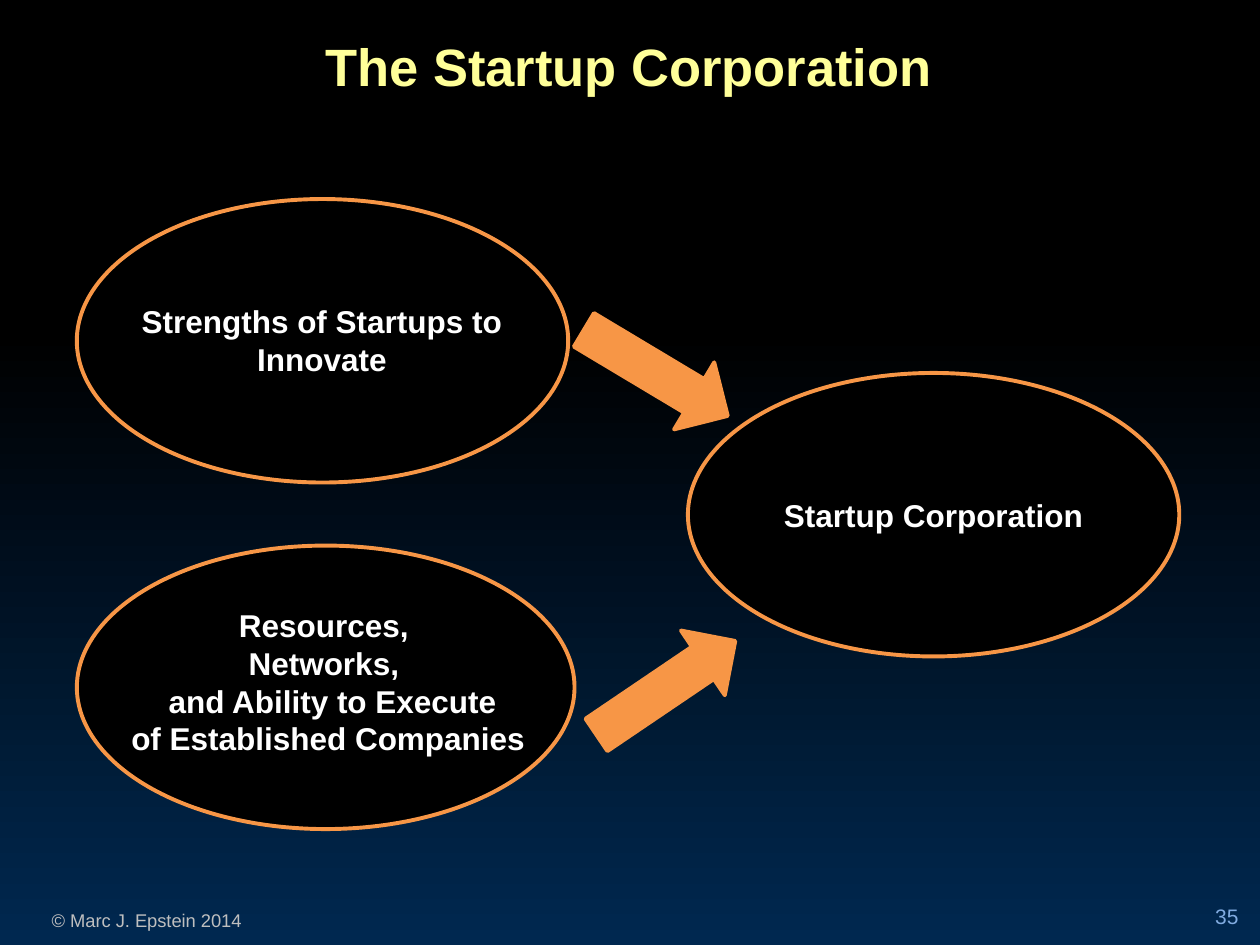
from pptx import Presentation
from pptx.dml.color import RGBColor
from pptx.enum.shapes import MSO_SHAPE
from pptx.enum.text import MSO_ANCHOR, MSO_AUTO_SIZE, PP_ALIGN
from pptx.util import Inches, Pt

COLORS = {
    "black": "000000",
    "navy": "002850",
    "orange": "F79646",
    "white": "FFFFFF",
    "yellow": "FFFF99",
    "gray": "BFBFBF",
    "blue": "81ABE0",
}


def color(name):
    return RGBColor.from_string(COLORS[name])


def write_text(frame, text, size=18, tint="white", bold=True,
               align=PP_ALIGN.CENTER, anchor=MSO_ANCHOR.TOP, wrap=True):
    frame.word_wrap = wrap
    frame.auto_size = MSO_AUTO_SIZE.NONE
    frame.vertical_anchor = anchor
    for index, line in enumerate(text.split("\n")):
        para = frame.paragraphs[0] if index == 0 else frame.add_paragraph()
        para.alignment = align
        span = para.add_run()
        span.text = line
        span.font.name = "Arial"
        span.font.size = Pt(size)
        span.font.bold = bold
        span.font.color.rgb = color(tint)


class SlideBuilder:
    accent = "orange"
    line_width = Pt(2.25)

    def __init__(self, page):
        self.page = page

    def background(self, start, end, hold):
        fill = self.page.background.fill
        fill.gradient()
        fill.gradient_angle = 270
        stops = zip(fill.gradient_stops, (start, end), (hold, 1))
        for stop, name, position in stops:
            stop.color.rgb = color(name)
            stop.position = position

    def title(self, text, left, top, width, height):
        box = self.page.shapes.title
        box.left, box.top = Inches(left), Inches(top)
        box.width, box.height = Inches(width), Inches(height)
        write_text(box.text_frame, text, size=30, tint="yellow")

    def text(self, text, left, top, width, height, **style):
        box = self.page.shapes.add_textbox(
            Inches(left), Inches(top), Inches(width), Inches(height))
        write_text(box.text_frame, text, **style)
        return box

    def shape(self, kind, fill, left, top, width, height):
        shape = self.page.shapes.add_shape(
            kind, Inches(left), Inches(top), Inches(width), Inches(height))
        shape.shadow.inherit = False
        shape.fill.solid()
        shape.fill.fore_color.rgb = color(fill)
        shape.line.color.rgb = color(self.accent)
        shape.line.width = self.line_width
        return shape

    def ellipse(self, left, top, width=3.9):
        return self.shape(MSO_SHAPE.OVAL, "black", left, top, width, 2.25)

    def arrow(self, left, top, angle):
        arrow = self.shape(
            MSO_SHAPE.RIGHT_ARROW, self.accent, left, top, 1.33, 0.62)
        arrow.rotation = angle


def main():
    deck = Presentation()
    deck.slide_width, deck.slide_height = Inches(10), Inches(7.5)
    builder = SlideBuilder(deck.slides.add_slide(deck.slide_layouts[5]))

    builder.background("black", "navy", hold=0.35)
    builder.title("The Startup Corporation", -0.01, 0.22, 10, 0.61)
    builder.text("© Marc J. Epstein 2014", -0.17, 7.17, 2.67, 0.28,
                 size=10.5, tint="gray", bold=False)
    number = builder.text("35", 9, 7.02, 0.83, 0.4, size=12, tint="blue",
                          bold=False, align=PP_ALIGN.RIGHT,
                          anchor=MSO_ANCHOR.BOTTOM)
    number.text_frame.margin_left = number.text_frame.margin_right = 0

    result = builder.ellipse(5.46, 2.96)
    write_text(result.text_frame, "Startup Corporation",
               anchor=MSO_ANCHOR.MIDDLE, wrap=False)
    builder.ellipse(0.61, 1.58)
    builder.ellipse(0.61, 4.33, width=3.95)
    builder.arrow(4.54, 2.65, angle=30.9)
    builder.arrow(4.62, 5.15, angle=325.9)

    builder.text("Resources, \nNetworks, \n and Ability to Execute\n"
                 "of Established Companies", 0.94, 4.76, 3.33, 1.31)
    builder.text("Strengths of Startups to Innovate", 0.89, 2.35, 3.33, 0.71)

    deck.save("out.pptx")


if __name__ == "__main__":
    main()
